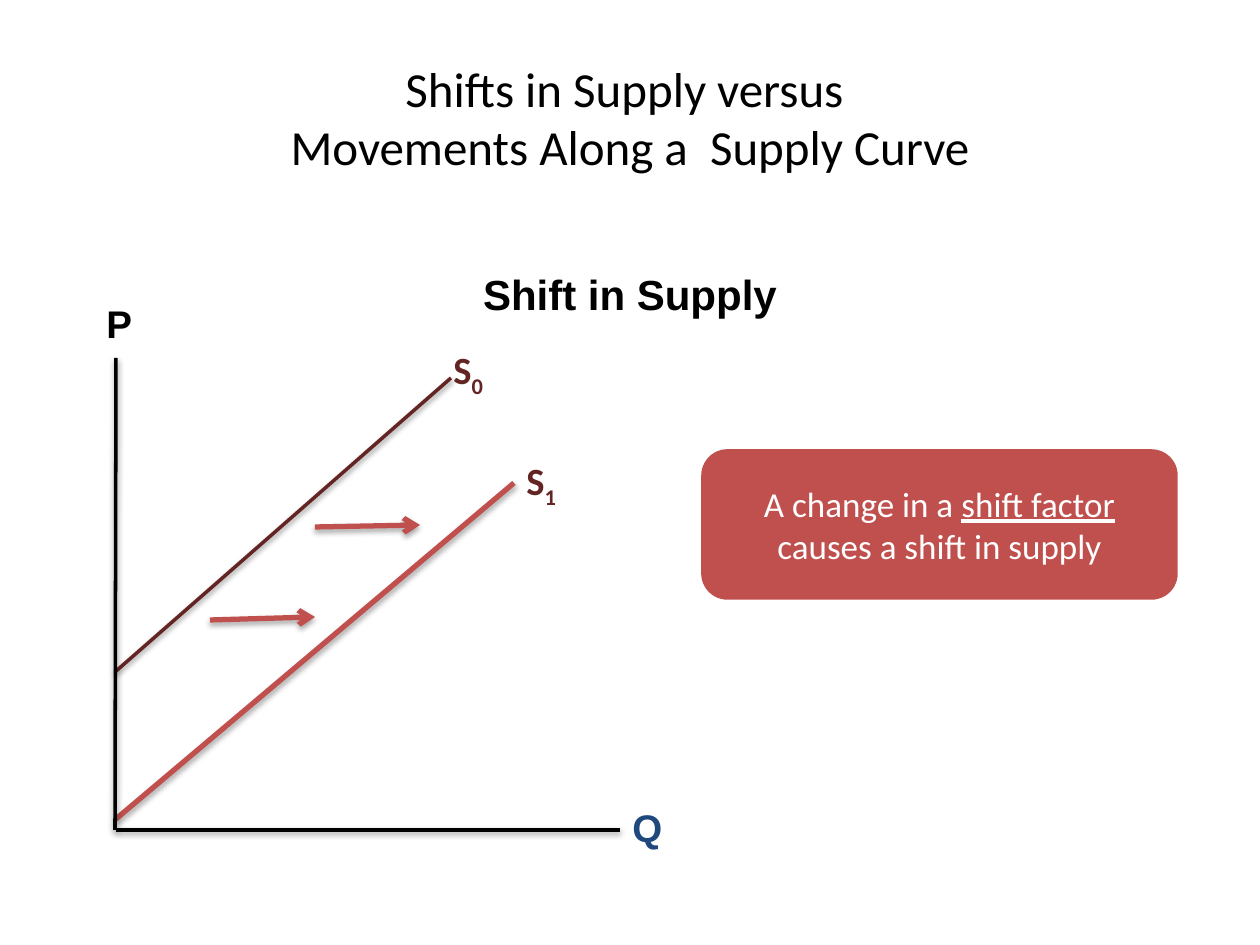
from lxml import etree
from pptx import Presentation
from pptx.dml.color import RGBColor
from pptx.enum.shapes import MSO_CONNECTOR, MSO_SHAPE
from pptx.enum.text import MSO_ANCHOR, MSO_AUTO_SIZE, PP_ALIGN
from pptx.oxml import parse_xml
from pptx.oxml.ns import nsdecls, qn
from pptx.util import Pt

PX = 914400 // 126
BLACK = RGBColor(0x00, 0x00, 0x00)
WHITE = RGBColor(0xFF, 0xFF, 0xFF)
RED = RGBColor(0xC0, 0x50, 0x4D)
MAROON = RGBColor(0x63, 0x25, 0x23)
NAVY = RGBColor(0x1F, 0x49, 0x7D)


def px(*lengths):
    return [length * PX for length in lengths]


def style(span, size, font, color, bold=False):
    span.font.size = Pt(size)
    span.font.name = font
    span.font.color.rgb = color
    span.font.bold = bold


def add_label(page, box, text, size, font, color, subscript="", align=PP_ALIGN.LEFT):
    frame = page.shapes.add_textbox(*px(*box)).text_frame
    frame.word_wrap = True
    frame.auto_size = MSO_AUTO_SIZE.SHAPE_TO_FIT_TEXT
    para = frame.paragraphs[0]
    para.text = text
    para.alignment = align
    if subscript:
        span = para.add_run()
        span.text = subscript
        span.font._element.set("baseline", "-25000")
    for span in para.runs:
        style(span, size, font, color, bold=True)


def add_line(page, start, end, color, width, arrow=False):
    line = page.shapes.add_connector(MSO_CONNECTOR.STRAIGHT, *px(*start, *end))
    line.line.color.rgb = color
    line.line.width = Pt(width)
    if arrow:
        etree.SubElement(line.line._ln, qn("a:headEnd"), type="arrow")
    # Heavier lines have a slightly deeper, lighter shadow
    distance, alpha = (23000, 35000) if width > 2 else (20000, 38000)
    line._element.spPr.append(parse_xml(
        f'<a:effectLst {nsdecls("a")}><a:outerShdw blurRad="40000" dist="{distance}" '
        f'dir="5400000" rotWithShape="0"><a:srgbClr val="000000">'
        f'<a:alpha val="{alpha}"/></a:srgbClr></a:outerShdw></a:effectLst>'))


def add_title(page, box):
    title = page.shapes.title
    title.left, title.top, title.width, title.height = px(*box)
    title.text_frame.vertical_anchor = MSO_ANCHOR.MIDDLE
    para = title.text_frame.paragraphs[0]
    para.text = "Shifts in Supply versus \vMovements Along a  Supply Curve"
    para.alignment = PP_ALIGN.CENTER
    for span in para.runs:
        style(span, 28, "Calibri", BLACK)


def add_callout(page, box):
    callout = page.shapes.add_shape(MSO_SHAPE.ROUNDED_RECTANGLE, *px(*box))
    callout.shadow.inherit = False
    callout.fill.solid()
    callout.fill.fore_color.rgb = RED
    callout.line.color.rgb = RED
    callout.line.width = Pt(2)
    callout.text_frame.word_wrap = True
    callout.text_frame.vertical_anchor = MSO_ANCHOR.MIDDLE
    para = callout.text_frame.paragraphs[0]
    para.alignment = PP_ALIGN.CENTER
    for text in ("A change in a ", "shift factor", " causes a shift in supply"):
        span = para.add_run()
        span.text = text
        style(span, 20, "Calibri", WHITE)
        span.font.underline = text == "shift factor"


def add_supply_graph(page, left, top):
    def at(x, y):
        return left + x, top + y

    # Axes, supply curves and shift arrows
    for start, end, color, width, arrow in (
        ((22, 536), (526, 536), BLACK, 2, False),
        ((357, 84), (21, 378), MAROON, 2, False),
        ((326, 231), (221, 233), RED, 3, True),
        ((420, 189), (22, 525), RED, 3, False),
        ((221, 323), (116, 326), RED, 3, True),
        ((22, 64), (21, 536), BLACK, 2, False),
    ):
        add_line(page, at(*start), at(*end), color, width, arrow)

    # Axis and curve labels
    for x, y, width, text, subscript, font, color in (
        (0, 0, 105, "P", "", "Arial", BLACK),
        (526, 504, 73, "Q", "", "Arial", NAVY),
        (347, 46, 95, "S", "0", "Calibri", MAROON),
        (420, 157, 95, "S", "1", "Calibri", MAROON),
    ):
        add_label(page, (*at(x, y), width, 59), text, 22, font, color, subscript)


def main():
    deck = Presentation()
    deck.slide_width, deck.slide_height = px(1260, 945)
    page = deck.slides.add_slide(deck.slide_layouts[5])
    add_title(page, (63, 38, 1134, 158))
    add_callout(page, (703, 451, 473, 147))
    add_label(page, (420, 262, 420, 64), "Shift in Supply", 24, "Arial", BLACK,
              align=PP_ALIGN.CENTER)
    add_supply_graph(page, 94, 294)
    deck.save("out.pptx")


if __name__ == "__main__":
    main()
